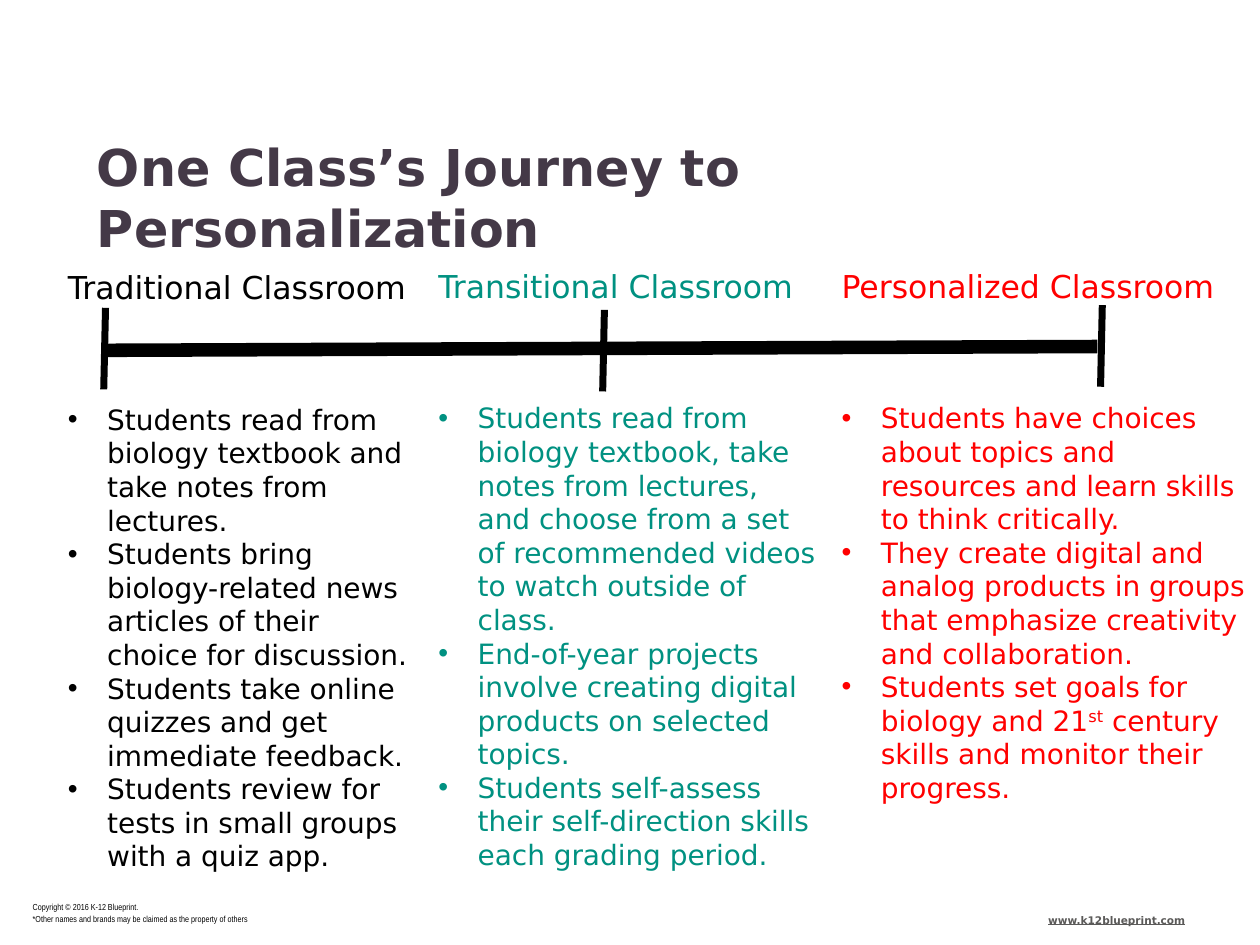
import dataclasses

import pptx
import pptx.dml.color
import pptx.enum.shapes
import pptx.enum.text
import pptx.oxml
import pptx.oxml.ns
import pptx.util

Pt = pptx.util.Pt


@dataclasses.dataclass(frozen=True)
class Theme:
    """Hold the colours, fonts and type sizes of the slide."""

    sans: str = "DejaVu Sans"
    thin: str = "Arial Narrow"
    black: str = "000000"
    teal: str = "009181"
    red: str = "FF0000"
    plum: str = "443947"
    grey: str = "5B5A59"
    title: int = 29
    head: int = 18
    body: int = 16
    legal: int = 5
    web: int = 6


LOOK = Theme()

STAGES = [
    ("Traditional Classroom", LOOK.black, (31.7, 149.8, 211.7, 356.4), [
        "Students read from biology textbook and take notes from lectures.",
        "Students bring biology-related news articles of their choice for discussion.",
        "Students take online quizzes and get immediate feedback.",
        "Students review for tests in small groups with a quiz app.",
    ]),
    ("Transitional Classroom", LOOK.teal, (243.4, 149, 230.4, 378), [
        "Students read from biology textbook, take notes from lectures, and choose "
        "from a set of recommended videos to watch outside of class.",
        "End-of-year projects involve creating digital products on selected topics.",
        "Students self-assess their self-direction skills each grading period.",
    ]),
    ("Personalized Classroom", LOOK.red, (473.8, 149, 245.5, 358.6), [
        "Students have choices about topics and resources and learn skills to think critically.",
        "They create digital and analog products in groups that emphasize "
        "creativity and collaboration.",
        "Students set goals for biology and 21^st^ century skills and monitor their progress.",
    ]),
]

LEGAL = ["Copyright © 2016 K-12 Blueprint.",
         "*Other names and brands may be claimed as the property of others"]


def write(para, text, size, color, font=LOOK.sans, bold=False, line=False,
          bullet=False, before=0, lead=None):
    """Fill a paragraph with formatted text, raising what stands between carets."""
    if bullet:
        props = para._p.get_or_add_pPr()
        props.set("marL", str(Pt(22.5)))
        props.set("indent", str(Pt(-22.5)))
        for tag, key, value in (("buFont", "typeface", "Arial"), ("buChar", "char", "•")):
            item = pptx.oxml.parse_xml(
                f'<a:{tag} {pptx.oxml.ns.nsdecls("a")} {key}="{value}"/>')
            props.append(item)
    para.alignment = pptx.enum.text.PP_ALIGN.LEFT
    para.space_before = Pt(before)
    if lead:
        para.line_spacing = Pt(lead)
    for spot, part in enumerate(text.split("^")):
        run = para.add_run()
        run.text = part
        run.font.name, run.font.size = font, Pt(size)
        run.font.bold, run.font.underline = bold, line
        run.font.color.rgb = pptx.dml.color.RGBColor.from_string(color)
        if spot % 2:
            run._r.get_or_add_rPr().set("baseline", "30000")


def place(shape, box):
    """Move a shape to a box given in points."""
    shape.left, shape.top, shape.width, shape.height = map(Pt, box)


def frame(shape, inset=True):
    """Set wrapping and anchor, and drop the margins when not inset."""
    text = shape.text_frame
    text.word_wrap = True
    text.auto_size = pptx.enum.text.MSO_AUTO_SIZE.NONE
    text.vertical_anchor = pptx.enum.text.MSO_ANCHOR.TOP
    if not inset:
        text.margin_left = text.margin_top = text.margin_right = text.margin_bottom = 0
    return text


def block(slide, box, inset=True):
    """Add a text box and return its frame."""
    return frame(slide.shapes.add_textbox(*map(Pt, box)), inset)


def stage(slide, name, color, box, points):
    """Add a classroom heading with its bullet list."""
    text = block(slide, box)
    write(text.paragraphs[0], name, LOOK.head, color)
    for spot, point in enumerate(points):
        write(text.add_paragraph(), point, LOOK.body, color,
              bullet=True, before=0 if spot else 55)


def stroke(slide, ends, width):
    """Draw a plain black line."""
    line = slide.shapes.add_connector(
        pptx.enum.shapes.MSO_CONNECTOR.STRAIGHT, *map(Pt, ends))
    line.line.color.rgb = pptx.dml.color.RGBColor.from_string(LOOK.black)
    line.line.width = Pt(width)
    line._element.spPr.append(
        pptx.oxml.parse_xml(f'<a:effectLst {pptx.oxml.ns.nsdecls("a")}/>'))


def scale(slide):
    """Draw the timeline and its three ticks."""
    stroke(slide, (59, 200.2, 627.1, 198), 7.75)
    for left, top in ((59.3, 175.9), (344.4, 177.1), (628.9, 174.4)):
        stroke(slide, (left + 1, top, left, top + 46.6), 4)


def main():
    """Build the slide and save it."""
    deck = pptx.Presentation()
    deck.slide_width, deck.slide_height = Pt(720), Pt(540)
    slide = deck.slides.add_slide(deck.slide_layouts[5])
    title = slide.shapes.title
    place(title, (55.4, 77.8, 609.8, 35.3))
    write(frame(title, False).paragraphs[0], "One Class’s Journey to Personalization",
          LOOK.title, LOOK.plum, bold=True)
    for item in STAGES:
        stage(slide, *item)
    scale(slide)
    legal = block(slide, (18.7, 514.1, 156.2, 14.4), False)
    for spot, text in enumerate(LEGAL):
        para = legal.add_paragraph() if spot else legal.paragraphs[0]
        write(para, text, LOOK.legal, LOOK.black, font=LOOK.thin, lead=7.1)
    web = block(slide, (599, 522, 94.3, 8.6), False)
    write(web.paragraphs[0], "www.k12blueprint.com", LOOK.web, LOOK.grey,
          bold=True, line=True)
    deck.save("out.pptx")


if __name__ == "__main__":
    main()
